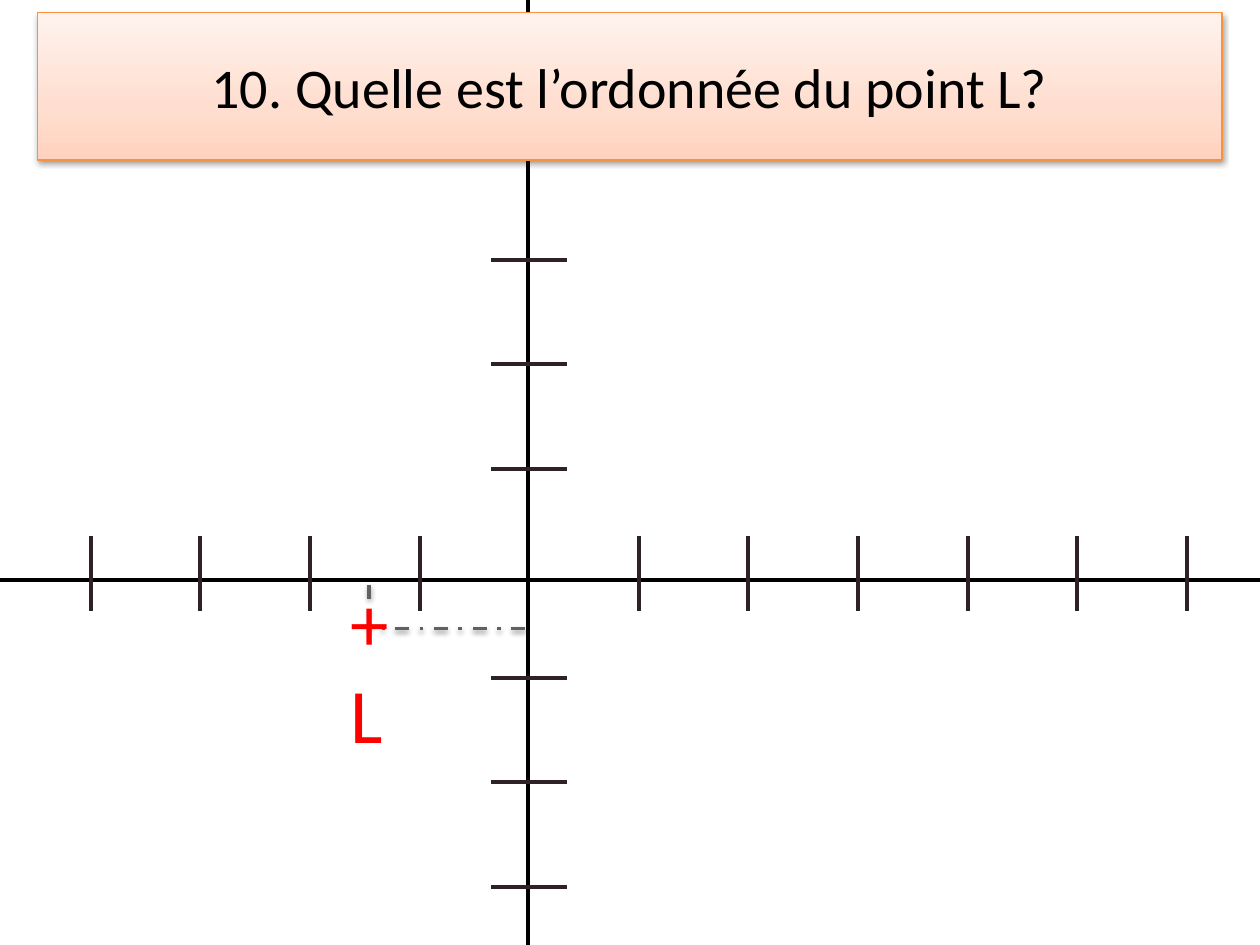
import pptx
import pptx.util
import pptx.dml.color
import pptx.enum.dml
import pptx.enum.shapes
import pptx.enum.text
import pptx.oxml
from lxml import etree

QUESTION = "10. Quelle est l’ordonnée du point L?"
POINT_MARKS = ("+", "L")
X_GRADUATIONS = (-4, -3, -2, -1, 1, 2, 3, 4, 5, 6)
Y_GRADUATIONS = (3, 2, 1, -1, -2, -3)

THEME = {
    "font": "Calibri",
    "axis": "000000",
    "tick": "2E2224",
    "guide": "61625E",
    "point": "FF0000",
    "question": "000000",
    "banner_line": "F69240",
    "banner_stops": ((0, "FFD2BD"), (35, "FFDED0"), (100, "FFF2ED")),
    "banner_angle": 270,
    "question_size": 32,
    "point_size": 44,
    "axis_width": 2.25,
    "guide_width": 2,
    "banner_width": 0.75,
}

WIDTH, HEIGHT = 10, 7.5
AXIS_X, AXIS_Y = 4.19, 4.6
GRID_X, GRID_Y = 4.2, 4.55
UNIT_X, UNIT_Y = 0.87, 0.83
TICK = 0.6
POINT_X, POINT_Y = 2.93, 4.99
BANNER = (0.03 * WIDTH, 0.1, 0.94 * WIDTH, 1.17)
POINT_BOX = (2.68, 4.51, 1.52, 1.58)

DRAWING_NS = 'xmlns:a="http://schemas.openxmlformats.org/drawingml/2006/main"'


def inches(lengths):
    return [pptx.util.Inches(length) for length in lengths]


def color(key):
    return pptx.dml.color.RGBColor.from_string(THEME[key])


def add_effects(shape, shadow):
    """Replace the theme effect by a soft downward shadow, or by none."""
    soft = ('<a:outerShdw blurRad="39370" dist="20320" dir="5400000" rotWithShape="0">'
            '<a:srgbClr val="000000"><a:alpha val="38000"/></a:srgbClr></a:outerShdw>')
    shape._element.spPr.append(pptx.oxml.parse_xml(
        f'<a:effectLst {DRAWING_NS}>{soft if shadow else ""}</a:effectLst>'))


def add_line(slide, start, end, color_key, width_key, dash=None):
    line = slide.shapes.add_connector(
        pptx.enum.shapes.MSO_CONNECTOR.STRAIGHT, *inches(start + end))
    line.line.color.rgb = color(color_key)
    line.line.width = pptx.util.Pt(THEME[width_key])
    if dash:
        line.line.dash_style = dash
    add_effects(line, shadow=bool(dash))


def format_text(frame, color_key, size_key):
    for paragraph in frame.paragraphs:
        for run in paragraph.runs:
            run.font.name = THEME["font"]
            run.font.size = pptx.util.Pt(THEME[size_key])
            run.font.color.rgb = color(color_key)


def fill_gradient(shape):
    shape.fill.gradient()
    shape.fill.gradient_angle = 360 - THEME["banner_angle"]
    stops = shape._element.spPr.find(".//{*}gsLst")
    for stop in list(stops):
        stops.remove(stop)
    for share, rgb in THEME["banner_stops"]:
        stops.append(pptx.oxml.parse_xml(
            f'<a:gs {DRAWING_NS} pos="{share * 1000}"><a:srgbClr val="{rgb}"/></a:gs>'))


def add_axes(slide):
    add_line(slide, (0, AXIS_Y), (WIDTH, AXIS_Y), "axis", "axis_width")
    add_line(slide, (AXIS_X, HEIGHT), (AXIS_X, 0), "axis", "axis_width")
    for step in X_GRADUATIONS:
        x = GRID_X + step * UNIT_X
        add_line(slide, (x, GRID_Y - TICK / 2), (x, GRID_Y + TICK / 2), "tick", "axis_width")
    for step in Y_GRADUATIONS:
        y = GRID_Y - step * UNIT_Y
        add_line(slide, (GRID_X - TICK / 2, y), (GRID_X + TICK / 2, y), "tick", "axis_width")


def add_question(slide):
    banner = slide.shapes.add_shape(
        pptx.enum.shapes.MSO_SHAPE.RECTANGLE, *inches(BANNER))
    fill_gradient(banner)
    banner.line.color.rgb = color("banner_line")
    banner.line.width = pptx.util.Pt(THEME["banner_width"])
    add_effects(banner, shadow=True)
    frame = banner.text_frame
    frame.text = QUESTION
    frame.word_wrap = True
    frame.vertical_anchor = pptx.enum.text.MSO_ANCHOR.MIDDLE
    frame.paragraphs[0].alignment = pptx.enum.text.PP_ALIGN.CENTER
    format_text(frame, "question", "question_size")


def add_point(slide):
    dash = pptx.enum.dml.MSO_LINE.DASH_DOT
    add_line(slide, (POINT_X, 4.64), (POINT_X, POINT_Y), "guide", "guide_width", dash)
    add_line(slide, (4.17, POINT_Y), (3.03, POINT_Y), "guide", "guide_width", dash)
    frame = slide.shapes.add_textbox(*inches(POINT_BOX)).text_frame
    frame.text = "\n".join(POINT_MARKS)
    frame.word_wrap = True
    frame.auto_size = pptx.enum.text.MSO_AUTO_SIZE.SHAPE_TO_FIT_TEXT
    format_text(frame, "point", "point_size")


def main():
    deck = pptx.Presentation()
    deck.slide_width, deck.slide_height = inches((WIDTH, HEIGHT))
    slide = deck.slides.add_slide(deck.slide_layouts[6])
    add_axes(slide)
    add_question(slide)
    add_point(slide)
    deck.save("out.pptx")


if __name__ == "__main__":
    main()
